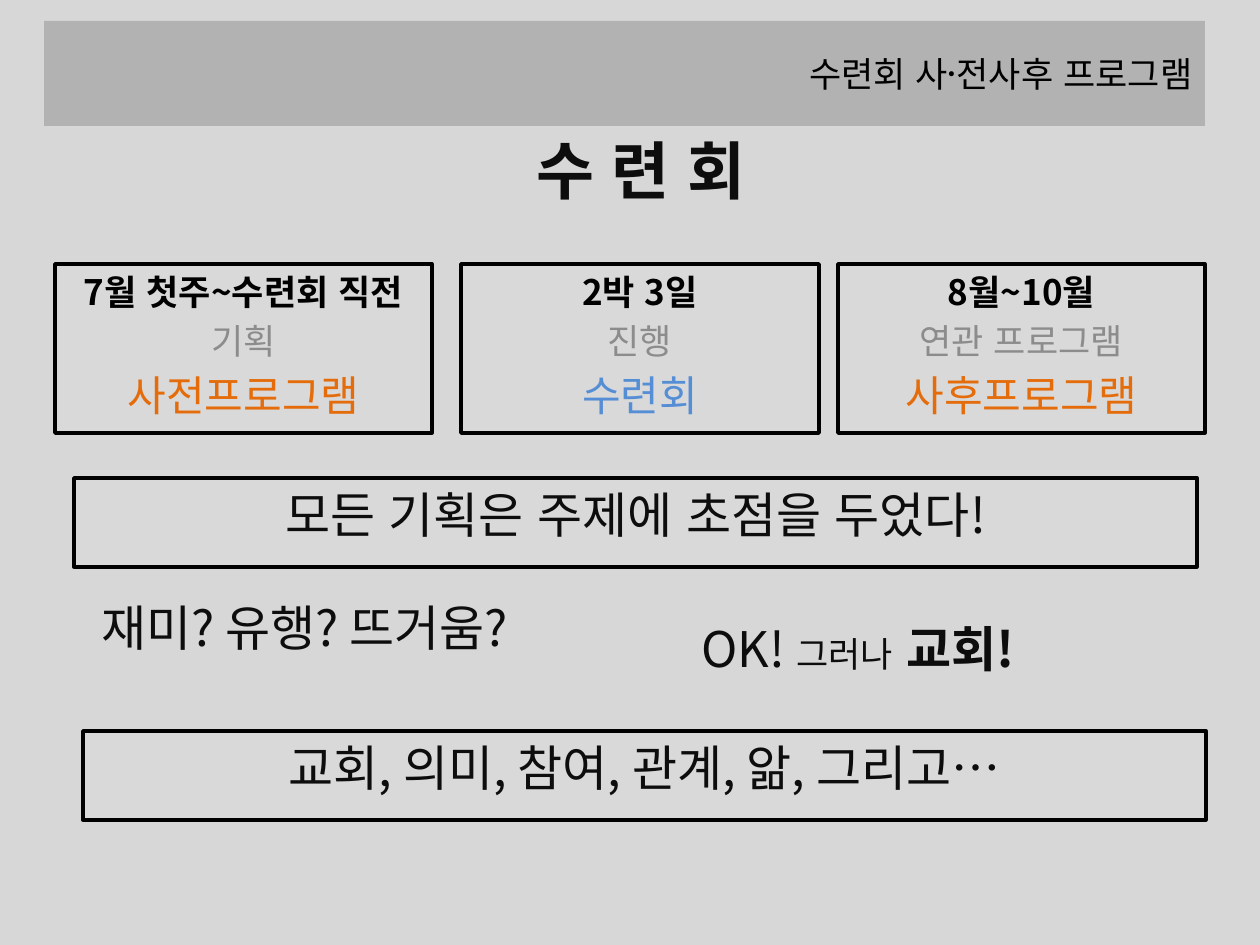
from pptx import Presentation
from pptx import util as u
from pptx.dml.color import RGBColor
from pptx.enum import lang, shapes, text
from pptx.oxml import ns
from lxml import etree

PX = 914400 / 126
FONT = "Noto Sans CJK KR"
BLACK, INK, GREY, ORANGE, BLUE = "000000", "0D0D0D", "8C8C8C", "E46C0A", "558ED5"
PANEL, BAR, BACKGROUND = "D9D9D9", "B2B2B2", "D7D7D7"
CENTER, RIGHT, JUSTIFY = (text.PP_ALIGN.CENTER, text.PP_ALIGN.RIGHT,
                          text.PP_ALIGN.JUSTIFY)


def px(n):
    """Turn pixels into EMU."""
    return u.Emu(round(n * PX))


def paint(fill, color):
    """Give a fill one solid colour."""
    fill.solid()
    fill.fore_color.rgb = RGBColor.from_string(color)


def run(content, size, color=INK, bold=False, font=FONT):
    """Describe a run of text with its format values."""
    return content, color, {"size": u.Pt(size), "bold": bold, "name": font,
                            "language_id": lang.MSO_LANGUAGE_ID.KOREAN}


def write(sp, paragraphs, align=CENTER, anchor=text.MSO_ANCHOR.TOP, before=0.2):
    """Write paragraphs of runs into a shape."""
    tf = sp.text_frame
    frame = {"word_wrap": True, "auto_size": text.MSO_AUTO_SIZE.NONE,
             "vertical_anchor": anchor}
    for name, value in frame.items():
        setattr(tf, name, value)
    for i, runs in enumerate(paragraphs):
        p = tf.add_paragraph() if i else tf.paragraphs[0]
        p.alignment = align
        p.space_before = u.Pt(round(before * runs[0][2]["size"].pt))
        for content, color, values in runs:
            r = p.add_run()
            r.text = content
            for name, value in values.items():
                setattr(r.font, name, value)
            paint(r.font.fill, color)
            ea = etree.SubElement(r.font._element, ns.qn("a:ea"))
            ea.set("typeface", FONT)


def add_title(s, box, runs):
    """Format the title placeholder as a grey bar."""
    sp = s.shapes.title
    sp.left, sp.top, sp.width, sp.height = map(px, box)
    paint(sp.fill, BAR)
    write(sp, [runs], RIGHT, text.MSO_ANCHOR.MIDDLE, 0)


def add_label(s, box, runs, align):
    """Add a line of text without a frame."""
    write(s.shapes.add_textbox(*map(px, box)), [runs], align)


def add_panel(s, box, paragraphs):
    """Add a framed rectangle with centred text."""
    sp = s.shapes.add_shape(shapes.MSO_SHAPE.RECTANGLE, *map(px, box))
    sp.shadow.inherit = False
    paint(sp.fill, PANEL)
    paint(sp.line.fill, BLACK)
    sp.line.width = u.Pt(2)
    write(sp, paragraphs)


def main():
    """Build the slide and save it."""
    prs = Presentation()
    prs.slide_width, prs.slide_height = px(1260), px(945)
    s = prs.slides.add_slide(prs.slide_layouts[5])
    paint(s.background.fill, BACKGROUND)

    add_title(s, (44, 21, 1161, 105), [run("수련회 사전〮사후 프로그램", 20, BLACK)])
    add_label(s, (48, 125, 1186, 110),
              [run("수 련 회", 36, bold=True, font="Arial")], CENTER)

    stages = [
        (55, 377, "7월 첫주~수련회 직전", "기획", "사전프로그램", ORANGE),
        (461, 358, "2박 3일", "진행", "수련회", BLUE),
        (838, 367, "8월~10월", "연관 프로그램", "사후프로그램", ORANGE),
    ]
    for left, width, period, step, program, color in stages:
        add_panel(s, (left, 264, width, 169), [[run(period, 20, BLACK, True)],
                                               [run(step, 20, GREY)],
                                               [run(program, 24, color)]])

    statements = [(74, 478, "모든 기획은 주제에 초점을 두었다!"),
                  (83, 731, "교회, 의미, 참여, 관계, 앎, 그리고…")]
    for left, top, statement in statements:
        add_panel(s, (left, top, 1123, 89), [[run(statement, 28)]])

    add_label(s, (89, 591, 500, 79), [run("재미? 유행? 뜨거움?", 28)], JUSTIFY)
    add_label(s, (689, 612, 481, 79),
              [run("OK! ", 28), run("그러나", 20), run(" ", 28),
               run("교회!", 28, bold=True)], JUSTIFY)

    prs.save("out.pptx")


if __name__ == "__main__":
    main()
